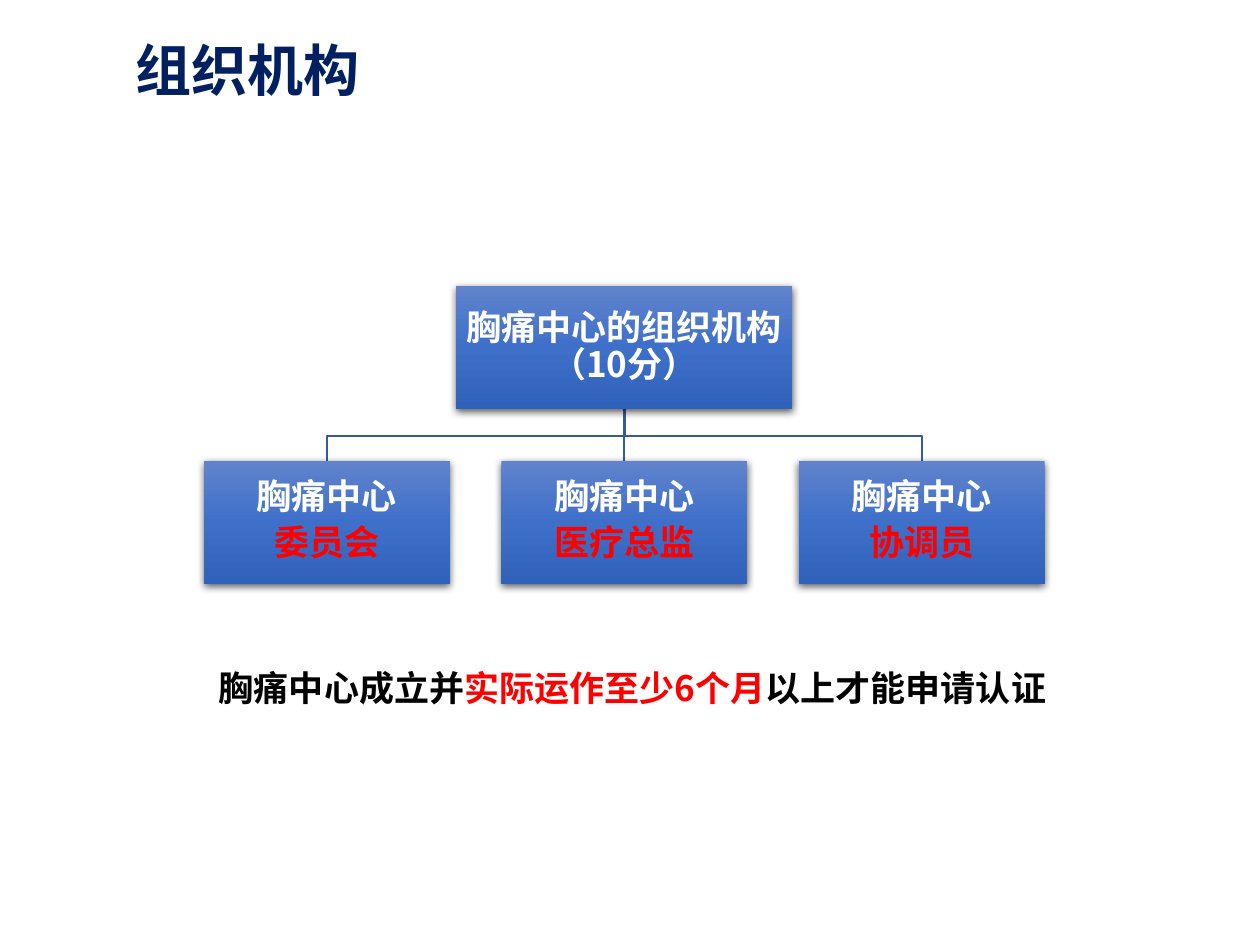
"""Builds the organisation chart slide of a chest pain centre."""
from pptx import Presentation, oxml, util as u
from pptx.dml.color import RGBColor
from pptx.enum import shapes as sh, text as tx
from pptx.oxml import ns

FONT = "Noto Sans CJK SC"
WHITE, RED, BLACK, NAVY, LINE = "FFFFFF", "FF0000", "000000", "002060", "365B9D"
STOPS = [(0, "6183CB"), (50, "3E70CA"), (100, "3062BB")]
MID, STEP = 356.76, 169.92
TOP, LOW, HIGH = 163.6, 263.6, 70


def color(code):
    return RGBColor.from_string(code)


def add_run(para, words, size, code):
    run = para.add_run()
    run.text = words
    font = run.font
    font.size, font.bold, font.name = u.Pt(size), True, FONT
    font.color.rgb = color(code)
    face = oxml.parse_xml(f'<a:ea {ns.nsdecls("a")} typeface="{FONT}"/>')
    run._r.rPr.find(ns.qn("a:latin")).addnext(face)


def add_text(slide, x, y, w, h, parts, size):
    box = slide.shapes.add_textbox(u.Pt(x), u.Pt(y), u.Pt(w), u.Pt(h))
    frame = box.text_frame
    frame.word_wrap = True
    para = frame.paragraphs[0]
    for words, code in parts:
        add_run(para, words, size, code)
    return frame


def add_box(slide, mid, y, w, rows, pitch):
    box = slide.shapes.add_shape(
        sh.MSO_SHAPE.RECTANGLE, u.Pt(mid - w / 2), u.Pt(y), u.Pt(w), u.Pt(HIGH))
    box.line.fill.background()
    stops = "".join(
        f'<a:gs pos="{pos * 1000}"><a:srgbClr val="{code}"/></a:gs>'
        for pos, code in STOPS)
    props = box._element.spPr
    props.find(ns.qn("a:ln")).addprevious(oxml.parse_xml(
        f'<a:gradFill {ns.nsdecls("a")} rotWithShape="1"><a:gsLst>{stops}</a:gsLst>'
        '<a:lin ang="5400000" scaled="0"/></a:gradFill>'))
    props.append(oxml.parse_xml(
        f'<a:effectLst {ns.nsdecls("a")}><a:outerShdw blurRad="57150" dist="19050" '
        'dir="5400000" algn="ctr" rotWithShape="0"><a:srgbClr val="000000">'
        '<a:alpha val="63000"/></a:srgbClr></a:outerShdw></a:effectLst>'))
    frame = box.text_frame
    frame.word_wrap = True
    frame.vertical_anchor = tx.MSO_ANCHOR.MIDDLE
    frame.margin_left = frame.margin_right = u.Pt(0.72)
    frame.margin_top = frame.margin_bottom = u.Pt(0.72)
    for i, (words, code) in enumerate(rows):
        para = frame.add_paragraph() if i else frame.paragraphs[0]
        para.alignment = tx.PP_ALIGN.CENTER
        para.line_spacing = pitch
        para.space_after = u.Pt(7)
        add_run(para, words, 20, code)


def add_link(slide, mid):
    start, half = TOP + HIGH, (TOP + HIGH + LOW) / 2
    if mid == MID:
        link = slide.shapes.add_connector(
            sh.MSO_CONNECTOR.STRAIGHT, u.Pt(MID), u.Pt(start), u.Pt(MID), u.Pt(LOW))
        link._element.spPr.append(
            oxml.parse_xml(f'<a:effectLst {ns.nsdecls("a")}/>'))
    else:
        pen = slide.shapes.build_freeform(MID, start, scale=u.Pt(1))
        pen.add_line_segments([(MID, half), (mid, half), (mid, LOW)], close=False)
        link = pen.convert_to_shape()
        link.fill.background()
        link.shadow.inherit = False
    link.line.color.rgb = color(LINE)
    link.line.width = u.Pt(1)


def main():
    deck = Presentation()
    deck.slide_width, deck.slide_height = u.Pt(720), u.Pt(540)
    slide = deck.slides.add_slide(deck.slide_layouts[6])

    title = add_text(slide, 70.6, 14.4, 590.4, 54.7, [("组织机构", NAVY)], 32)
    title.vertical_anchor = tx.MSO_ANCHOR.MIDDLE
    title.paragraphs[0].line_spacing = 0.9

    roles = ["委员会", "医疗总监", "协调员"]
    mids = [MID + (i - 1) * STEP for i in range(len(roles))]
    for mid in reversed(mids):
        add_link(slide, mid)
    add_box(slide, MID, TOP, 192.2, [("胸痛中心的组织机构（10分）", WHITE)], 0.9)
    for mid, role in zip(mids, roles):
        add_box(slide, mid, LOW, 140.4, [("胸痛中心", WHITE), (role, RED)], 0.8)

    note = add_text(slide, 82, 377.3, 567.4, 31.7, [
        ("胸痛中心成立并", BLACK), ("实际运作至少6个月", RED),
        ("以上才能申请认证", BLACK)], 20)
    note.paragraphs[0]._p.get_or_add_pPr().set("marL", str(u.Pt(36)))

    deck.save("out.pptx")


if __name__ == "__main__":
    main()
